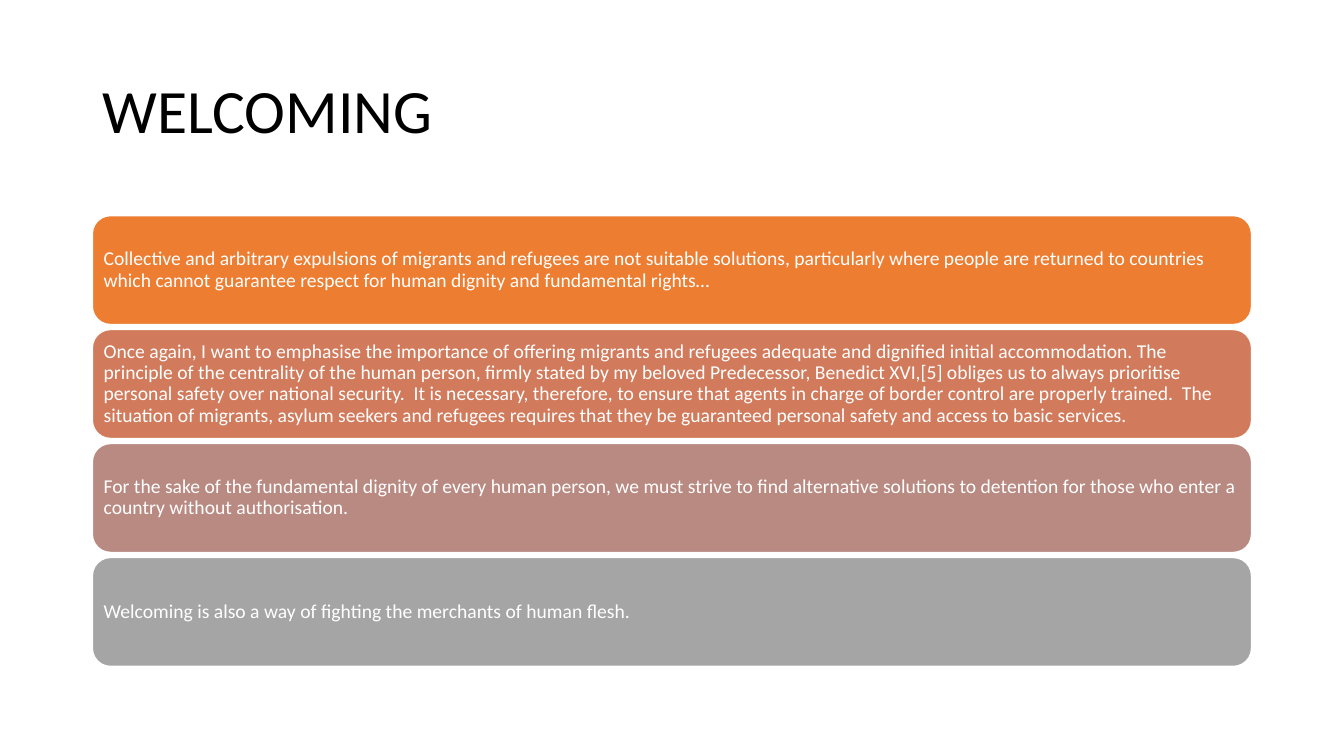
from pptx import Presentation
from pptx.dml.color import RGBColor
from pptx.enum.shapes import MSO_SHAPE
from pptx.enum.text import MSO_ANCHOR, MSO_AUTO_SIZE, PP_ALIGN
from pptx.util import Pt

TITLE_BOX = (66, 28.8, 828, 104.4)
CARDS_BOX = (66, 154, 828, 322)
CARD_GAP = 3.6
CARDS = [
    ("ED7D31", "Collective and arbitrary expulsions of migrants and refugees are not suitable solutions, "
     "particularly where people are returned to countries which cannot guarantee respect for human "
     "dignity and fundamental rights…"),
    ("D17B5C", "Once again, I want to emphasise the importance of offering migrants and refugees adequate "
     "and dignified initial accommodation. The principle of the centrality of the human person, firmly "
     "stated by my beloved Predecessor, Benedict XVI,[5] obliges us to always prioritise personal safety "
     "over national security.  It is necessary, therefore, to ensure that agents in charge of border "
     "control are properly trained.  The situation of migrants, asylum seekers and refugees requires that "
     "they be guaranteed personal safety and access to basic services."),
    ("B98A82", "For the sake of the fundamental dignity of every human person, we must strive to find "
     "alternative solutions to detention for those who enter a country without authorisation."),
    ("A5A5A5", "Welcoming is also a way of fighting the merchants of human flesh."),
]
FRAME_FORMAT = {"word_wrap": True, "auto_size": MSO_AUTO_SIZE.NONE, "vertical_anchor": MSO_ANCHOR.MIDDLE}
CARD_MARGINS = {f"margin_{side}": Pt(4.3) for side in ("left", "top", "right", "bottom")}
PARA_FORMAT = {"alignment": PP_ALIGN.LEFT, "line_spacing": 0.9}


def color(value):
    return RGBColor.from_string(value)


def apply_format(target, values):
    for name, value in values.items():
        setattr(target, name, value)


def write_text(shape, text, size, hex_color, margins):
    frame = shape.text_frame
    apply_format(frame, FRAME_FORMAT | margins)
    para = frame.paragraphs[0]
    apply_format(para, PARA_FORMAT)
    span = para.add_run()
    span.text = text
    apply_format(span.font, {"name": "Calibri", "size": Pt(size)})
    span.font.color.rgb = color(hex_color)


def place_title(page, box, text):
    title = page.shapes.title
    apply_format(title, dict(zip(("left", "top", "width", "height"), map(Pt, box))))
    write_text(title, text, 44, "000000", {})


def place_cards(page, box, cards):
    left, top, width, height = box
    card_height = (height - CARD_GAP * (len(cards) - 1)) / len(cards)
    for index, (fill, text) in enumerate(cards):
        card_top = top + index * (card_height + CARD_GAP)
        card = page.shapes.add_shape(
            MSO_SHAPE.ROUNDED_RECTANGLE, Pt(left), Pt(card_top), Pt(width), Pt(card_height))
        card.shadow.inherit = False
        card.fill.solid()
        card.fill.fore_color.rgb = color(fill)
        card.line.color.rgb = color("FFFFFF")
        card.line.width = Pt(1)
        write_text(card, text, 14, "FFFFFF", CARD_MARGINS)


def main():
    deck = Presentation()
    apply_format(deck, {"slide_width": Pt(960), "slide_height": Pt(540)})
    page = deck.slides.add_slide(deck.slide_layouts.get_by_name("Title Only"))
    place_title(page, TITLE_BOX, "WELCOMING")
    place_cards(page, CARDS_BOX, CARDS)
    deck.save("out.pptx")


if __name__ == "__main__":
    main()
